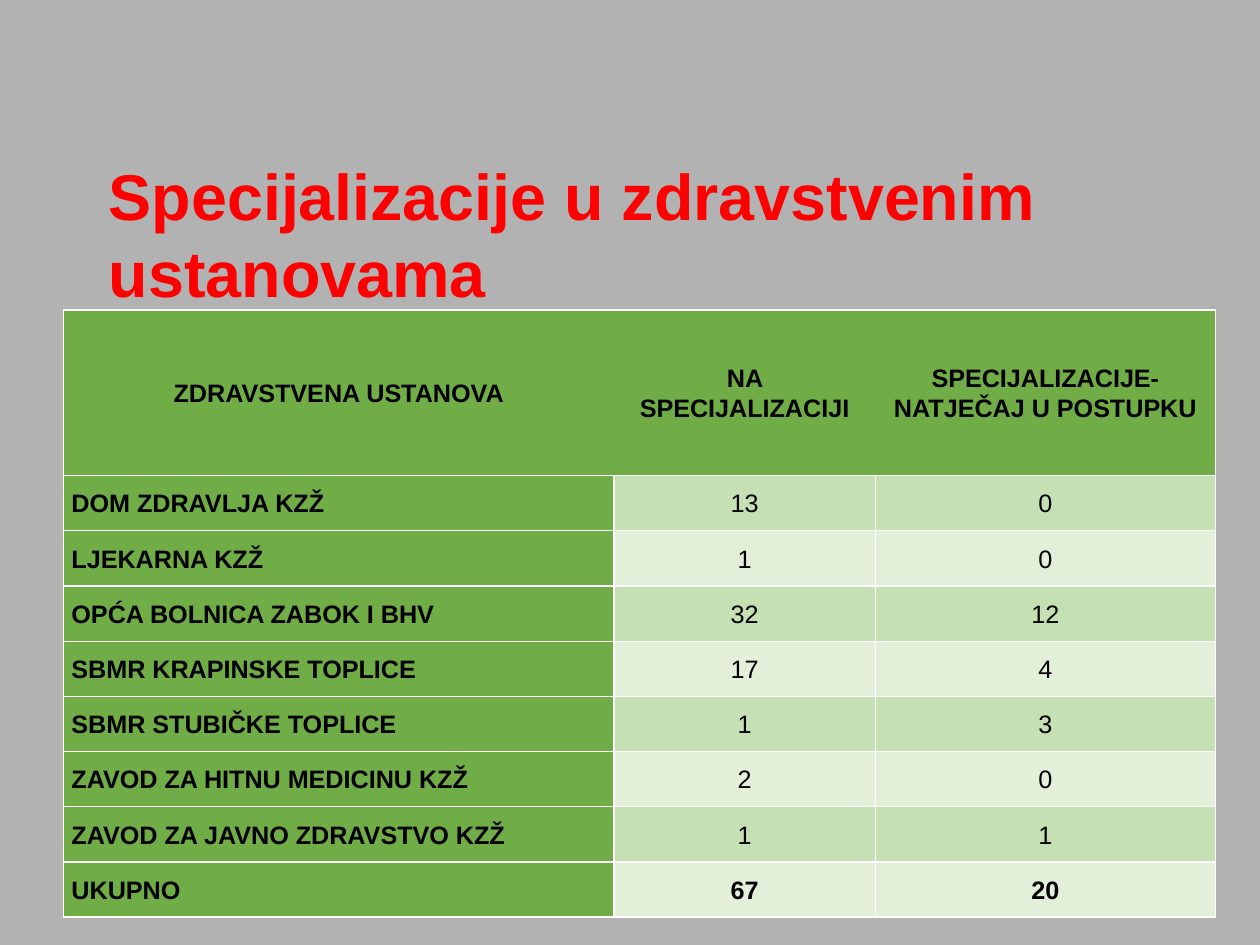
from lxml.etree import SubElement
from pptx import Presentation
from pptx.dml.color import RGBColor
from pptx.enum.text import MSO_ANCHOR, PP_ALIGN
from pptx.oxml.ns import qn
from pptx.util import Inches, Pt

COLORS = {
    "background": "B2B2B2",
    "title": "FF0000",
    "text": "000000",
    "green": "70AD47",
    "odd": "C5E0B3",
    "even": "E2EFD9",
    "border": "FFFFFF",
}
FONT = "Arial"
SLIDE_WIDTH = 11.1
COLUMN_WIDTHS = [4.85, 2.3, 3]
HEADER_HEIGHT = 1.46
ROWS = [
    ("ZDRAVSTVENA USTANOVA", "NA SPECIJALIZACIJI", "SPECIJALIZACIJE- NATJEČAJ U POSTUPKU"),
    ("DOM ZDRAVLJA KZŽ", "13", "0"),
    ("LJEKARNA KZŽ", "1", "0"),
    ("OPĆA BOLNICA ZABOK I BHV", "32", "12"),
    ("SBMR KRAPINSKE TOPLICE", "17", "4"),
    ("SBMR STUBIČKE TOPLICE", "1", "3"),
    ("ZAVOD ZA HITNU MEDICINU KZŽ", "2", "0"),
    ("ZAVOD ZA JAVNO ZDRAVSTVO KZŽ", "1", "1"),
    ("UKUPNO", "67", "20"),
]


def color(name):
    """Return the named palette colour."""
    return RGBColor.from_string(COLORS[name])


def add_span(para, text, size, color_name, bold):
    """Add one formatted run to a paragraph."""
    span = para.add_run()
    span.text = text
    span.font.name = FONT
    span.font.size = Pt(size)
    span.font.bold = bold
    span.font.color.rgb = color(color_name)


def add_title(page, left, top, width, height):
    """Place the slide title in the given box."""
    box = page.shapes.add_textbox(Inches(left), Inches(top), Inches(width), Inches(height))
    frame = box.text_frame
    frame.word_wrap = True
    frame.vertical_anchor = MSO_ANCHOR.TOP
    frame.margin_left = frame.margin_right = Inches(0.1)
    frame.margin_top = Inches(0.05)
    add_span(frame.paragraphs[0], "Specijalizacije u zdravstvenim ustanovama", 41, "title", True)


def set_borders(cell, hidden):
    """Draw white cell borders, leaving out the hidden sides."""
    properties = cell._tc.get_or_add_tcPr()
    for position, side in enumerate(("lnL", "lnR", "lnT", "lnB")):
        line = properties.makeelement(qn(f"a:{side}"), {"w": str(Pt(1))})
        properties.insert(position, line)
        if side in hidden:
            SubElement(line, qn("a:noFill"))
        else:
            fill = SubElement(line, qn("a:solidFill"))
            SubElement(fill, qn("a:srgbClr"), val=COLORS["border"])


def fill_cell(cell, text, row, column):
    """Style one table cell by its place and write its text."""
    header, first = row == 0, column == 0
    band = "odd" if row % 2 else "even"
    cell.fill.solid()
    cell.fill.fore_color.rgb = color("green" if header or first else band)
    cell.vertical_anchor = MSO_ANCHOR.MIDDLE
    cell.margin_left = cell.margin_right = Inches(0.07)
    cell.margin_top = cell.margin_bottom = 0
    para = cell.text_frame.paragraphs[0]
    para.alignment = PP_ALIGN.LEFT if first and not header else PP_ALIGN.CENTER
    para.line_spacing = 1.07
    add_span(para, text, 16, "text", header or first or row == len(ROWS) - 1)
    hidden = set()
    if header and column > 0:
        hidden.add("lnL")
    if header and column < len(COLUMN_WIDTHS) - 1:
        hidden.add("lnR")
    set_borders(cell, hidden)


def add_institution_table(page, left, top, width, height):
    """Place the table of institutions in the given box."""
    table = page.shapes.add_table(
        len(ROWS), len(COLUMN_WIDTHS), Inches(left), Inches(top), Inches(width), Inches(height)
    ).table
    for column, share in zip(table.columns, COLUMN_WIDTHS):
        column.width = Inches(width * share / sum(COLUMN_WIDTHS))
    body_height = (height - HEADER_HEIGHT) / (len(ROWS) - 1)
    for row, texts in enumerate(ROWS):
        table.rows[row].height = Inches(body_height if row else HEADER_HEIGHT)
        for column, text in enumerate(texts):
            fill_cell(table.cell(row, column), text, row, column)


def main():
    """Build and save the deck."""
    deck = Presentation()
    deck.slide_width = Inches(SLIDE_WIDTH)
    deck.slide_height = Inches(SLIDE_WIDTH * 3 / 4)
    page = deck.slides.add_slide(deck.slide_layouts[6])
    page.background.fill.solid()
    page.background.fill.fore_color.rgb = color("background")
    add_title(page, 0.86, 1.32, 9.44, 1.27)
    add_institution_table(page, 0.56, 2.73, 10.15, 5.35)
    deck.save("out.pptx")


if __name__ == "__main__":
    main()
